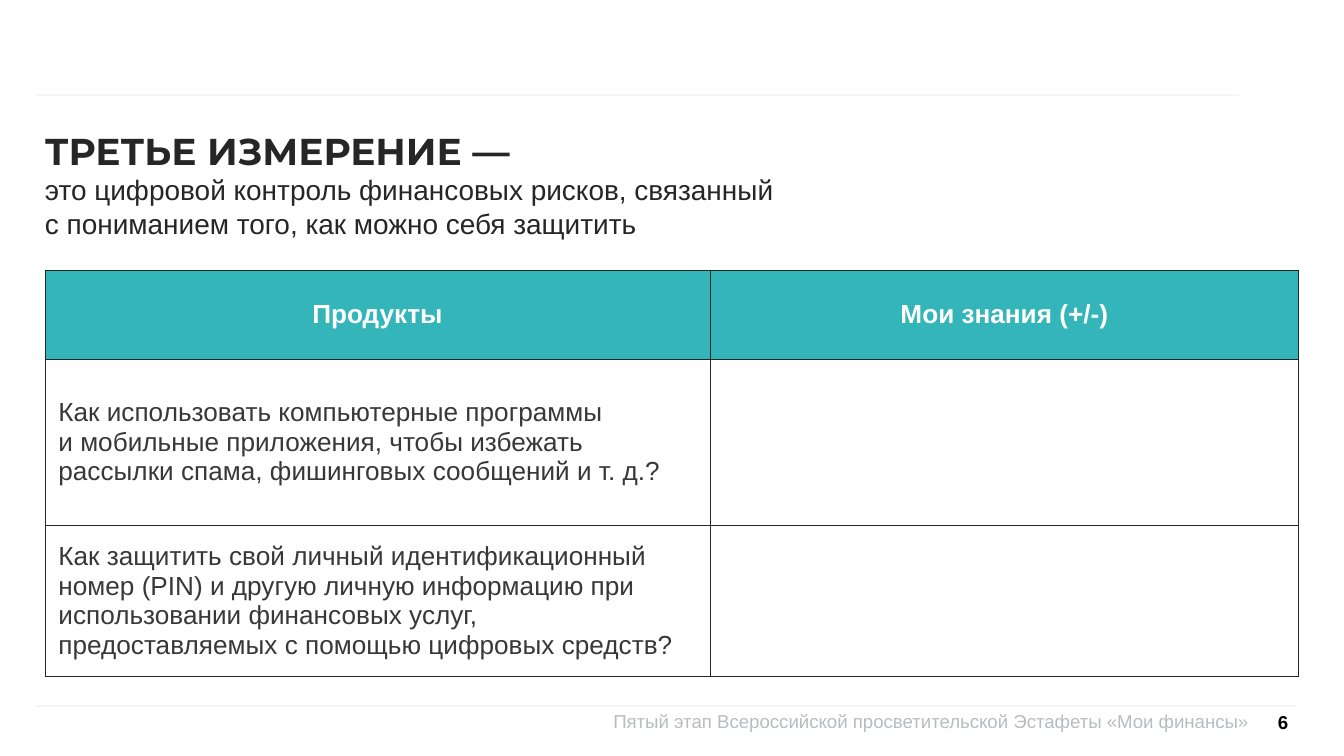
from lxml.etree import SubElement
from pptx import Presentation
from pptx.dml.color import RGBColor
from pptx.enum.shapes import MSO_CONNECTOR
from pptx.enum.text import MSO_ANCHOR as Anchor, PP_ALIGN as Align
from pptx.oxml.ns import qn
from pptx.util import Emu, Pt

PX = 914400 / 134.4
WHITE = RGBColor(0xFF, 0xFF, 0xFF)
BLACK = RGBColor(0, 0, 0)
INK = RGBColor(0x26, 0x26, 0x26)
BODY = RGBColor(0x38, 0x38, 0x38)
TEAL = RGBColor(0x33, 0xB5, 0xBA)
GRAY = RGBColor(0xB9, 0xBC, 0xBF)
RULE = RGBColor(0xF5, 0xF5, 0xF5)


def px(*lengths):
    return [Emu(round(length * PX)) for length in lengths]


def write(para, text, size, color, bold=False, align=Align.LEFT, name="Arial"):
    para.text = text
    para.alignment = align
    font = para.font
    font.name, font.size, font.bold = name, Pt(size), bold
    font.color.rgb = color


deck = Presentation()
deck.slide_width, deck.slide_height = px(1344, 756)
page = deck.slides.add_slide(deck.slide_layouts[6])
shapes = page.shapes

for y, right in ((95, 1239), (706, 1297)):
    rule = shapes.add_connector(MSO_CONNECTOR.STRAIGHT, *px(36, y, right, y))
    rule.line.color.rgb = RULE
    rule.line.width = Pt(1)
    SubElement(rule._element.spPr, qn("a:effectLst"))

frames = []
for bounds, inset, wrap, anchor in (
    ((481, 710, 767, 47), 0, True, Anchor.TOP),
    ((1270, 703, 26, 38), 8, False, Anchor.MIDDLE),
    ((45, 128, 750, 75), 0, True, Anchor.TOP),
):
    frame = shapes.add_textbox(*px(*bounds)).text_frame
    frame.margin_left, frame.margin_top, frame.margin_right, frame.margin_bottom = px(*[inset] * 4)
    frame.word_wrap = wrap
    frame.vertical_anchor = anchor
    frames.append(frame)
footer, number, title = frames

write(footer.paragraphs[0], "Пятый этап Всероссийской просветительской Эстафеты «Мои финансы»",
      10, GRAY, align=Align.RIGHT)
write(number.paragraphs[0], "6", 10, BLACK, bold=True, align=Align.RIGHT)
write(title.paragraphs[0], "ТРЕТЬЕ ИЗМЕРЕНИЕ —", 20, INK, bold=True, name="Montserrat")
write(title.add_paragraph(),
      "это цифровой контроль финансовых рисков, связанный\vс пониманием того, как можно себя защитить",
      15, INK)

rows = [
    ("Продукты", "Мои знания (+/-)"),
    ("Как использовать компьютерные программы\vи мобильные приложения, чтобы избежать "
     "рассылки спама, фишинговых сообщений и т. д.?", ""),
    ("Как защитить свой личный идентификационный номер (PIN) и другую личную информацию при "
     "использовании финансовых услуг, предоставляемых с помощью цифровых средств?", ""),
]
table = shapes.add_table(3, 2, *px(45, 270, 1254, 407)).table
for column, width in zip(table.columns, px(665, 589)):
    column.width = width
for row, height in zip(table.rows, px(89, 166, 152)):
    row.height = height

for r, texts in enumerate(rows):
    for c, text in enumerate(texts):
        cell = table.cell(r, c)
        cell.vertical_anchor = Anchor.MIDDLE
        for side in ("lnL", "lnR", "lnT", "lnB"):
            border = SubElement(cell._tc.get_or_add_tcPr(), qn(f"a:{side}"), w=str(Pt(0.5)))
            SubElement(SubElement(border, qn("a:solidFill")), qn("a:srgbClr"), val=str(INK))
        para = cell.text_frame.paragraphs[0]
        if r == 0:
            cell.fill.solid()
            cell.fill.fore_color.rgb = TEAL
            write(para, text, 14, WHITE, bold=True, align=Align.CENTER)
        else:
            cell.fill.background()
            write(para, text, 14, BODY)

deck.save("out.pptx")
